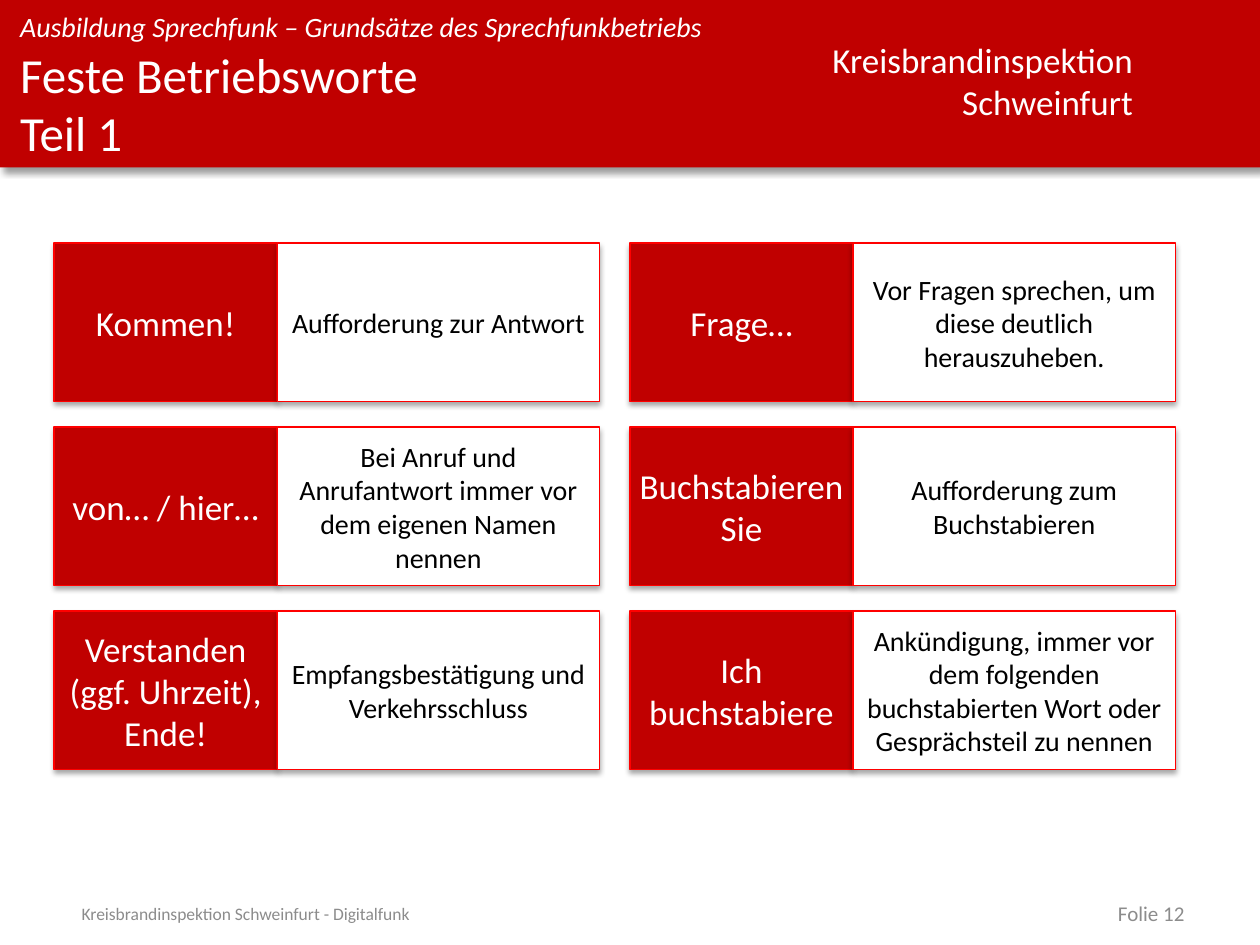
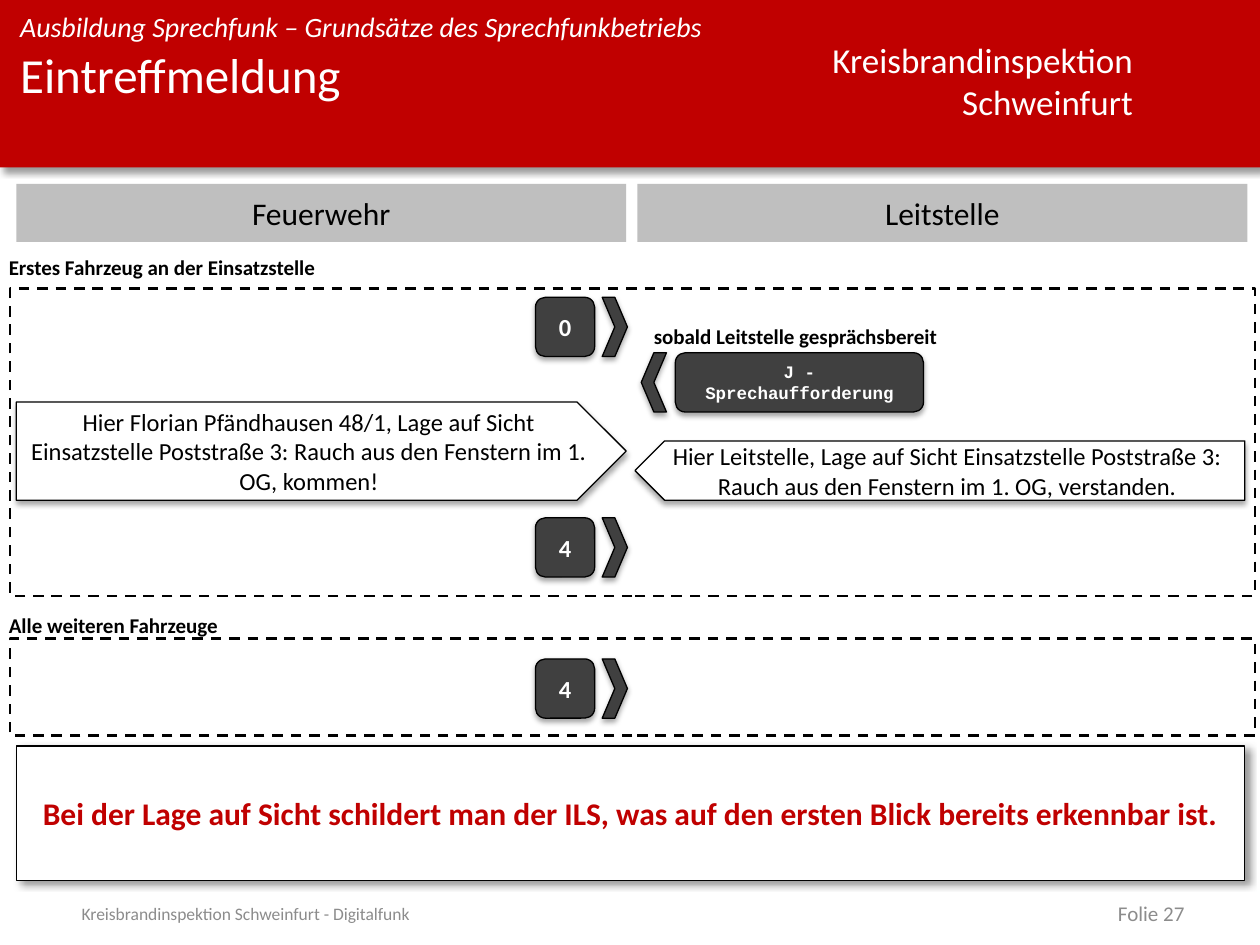
from lxml import etree
from pptx import Presentation
from pptx.dml.color import RGBColor
from pptx.enum.dml import MSO_LINE
from pptx.enum.shapes import MSO_SHAPE
from pptx.enum.text import MSO_ANCHOR, MSO_AUTO_SIZE, PP_ALIGN
from pptx.oxml.ns import qn
from pptx.util import Inches, Pt

RECT, ROUND = MSO_SHAPE.RECTANGLE, MSO_SHAPE.ROUNDED_RECTANGLE
CHEVRON, PLATE = MSO_SHAPE.CHEVRON, MSO_SHAPE.PENTAGON
LEFT, CENTER, RIGHT = PP_ALIGN.LEFT, PP_ALIGN.CENTER, PP_ALIGN.RIGHT
TOP, MIDDLE = MSO_ANCHOR.TOP, MSO_ANCHOR.MIDDLE
DASH, NO_FIT = MSO_LINE.DASH, MSO_AUTO_SIZE.NONE

WIDTH, HEIGHT = 10, 7.5
RED, BRIGHT_RED, WHITE, BLACK = "C00000", "FF0000", "FFFFFF", "000000"
DARK, SILVER, GREY = "404040", "BFBFBF", "8C8C8C"
FONT, MONO = "Calibri", "Courier New"
SOFT = (35, 3.1, 1.8, 90)
DEEP = (40, 4, 3, 45)
INSETS = (0.1, 0.05)

CARD_LEFT, CARD_TOP, CARD_H = 0.43, 1.93, 1.26
CARD_STEP_X, CARD_STEP_Y = 4.57, 1.46
WORD_W, MEANING_W = 1.77, 2.56

FIRE_X, CONTROL_X, LANE_W = 0.13, 5.06, 4.84
KEY, KEY_X, ARROW_X, ARROW_W = 0.47, 4.25, 4.78, 0.2
FRAME_X, FRAME_W = 0.08, 9.88

CARDS = [
    [("Kommen!", "Aufforderung zur Antwort"),
     ("Frage…", "Vor Fragen sprechen, um diese deutlich herauszuheben.")],
    [("von… / hier…",
      "Bei Anruf und Anrufantwort immer vor dem eigenen Namen nennen"),
     ("Buchstabieren Sie", "Aufforderung zum Buchstabieren")],
    [("Verstanden (ggf. Uhrzeit), Ende!",
      "Empfangsbestätigung und Verkehrsschluss"),
     ("Ich buchstabiere",
      "Ankündigung, immer vor dem folgenden buchstabierten Wort oder "
      "Gesprächsteil zu nennen")],
]


def rgb(color):
    """Turn a hex string into a colour."""
    return RGBColor.from_string(color)


def inches(*lengths):
    """Turn plain numbers into lengths."""
    return [Inches(n) for n in lengths]


def write(sp, lines, size, color=BLACK, align=LEFT, anchor=MIDDLE,
          insets=INSETS, wrap=True, bold=False, italic=False, font=FONT):
    """Fill a shape with one formatted paragraph per line."""
    tf = sp.text_frame
    tf.auto_size, tf.word_wrap, tf.vertical_anchor = NO_FIT, wrap, anchor
    tf.margin_left = tf.margin_right = Inches(insets[0])
    tf.margin_top = tf.margin_bottom = Inches(insets[1])
    for i, line in enumerate(lines):
        p = tf.add_paragraph() if i else tf.paragraphs[0]
        p.alignment = align
        for j, part in enumerate(line.split("\n")):
            if j:
                p.add_line_break()
            r = p.add_run()
            r.text = part
            r.font.name, r.font.size = font, Pt(size)
            r.font.bold, r.font.italic = bold, italic
            r.font.color.rgb = rgb(color)


def add_shadow(sp, alpha, blur, dist, angle):
    """Give a shape a black outer shadow."""
    effects = sp.element.spPr.find(qn("a:effectLst"))
    outer = etree.SubElement(
        effects, qn("a:outerShdw"), blurRad=str(Pt(blur)), dist=str(Pt(dist)),
        dir=str(angle * 60000), algn="ctr", rotWithShape="0")
    tint = etree.SubElement(outer, qn("a:srgbClr"), val=BLACK)
    etree.SubElement(tint, qn("a:alpha"), val=str(alpha * 1000))


def add_box(s, kind, box, fill=None, line=None, weight=0.75, shadow=None,
            flip=False):
    """Draw a preset shape."""
    sp = s.shapes.add_shape(kind, *inches(*box))
    sp.shadow.inherit = False
    if fill:
        sp.fill.solid()
        sp.fill.fore_color.rgb = rgb(fill)
    else:
        sp.fill.background()
    if line:
        sp.line.color.rgb = rgb(line)
        sp.line.width = Pt(weight)
    else:
        sp.line.fill.background()
    if shadow:
        add_shadow(sp, *shadow)
    if flip:
        sp.element.spPr.xfrm.set("flipH", "1")
    return sp


def add_label(s, box, lines, size, **style):
    """Add a text box."""
    write(s.shapes.add_textbox(*inches(*box)), lines, size, **style)


def add_slide(prs, title, number):
    """Start a slide with the red band, the title and the footer."""
    s = prs.slides.add_slide(prs.slide_layouts[5])
    head = s.shapes.title
    head.left, head.top, head.width, head.height = inches(0.16, 0.35, 6.32, 0.99)
    write(head, [title], 28, WHITE, anchor=TOP, insets=(0, 0))
    band = add_box(s, RECT, (0, 0, WIDTH, 1.33), RED, shadow=DEEP)
    head.element.addprevious(band.element)
    add_label(s, (6.48, 0.26, 2.61, 0.77), ["Kreisbrandinspektion", "Schweinfurt"],
              20, color=WHITE, align=RIGHT, anchor=TOP, wrap=False)
    add_label(s, (0.16, 0.08, 6.32, 0.27),
              ["Ausbildung Sprechfunk – Grundsätze des Sprechfunkbetriebs"],
              16, color=WHITE, anchor=TOP, insets=(0, 0), italic=True)
    add_label(s, (0.55, 7.15, 6.04, 0.2),
              ["Kreisbrandinspektion Schweinfurt - Digitalfunk"], 10, color=GREY)
    add_label(s, (7.17, 7.15, 2.33, 0.2), [f"Folie {number}"], 12,
              color=GREY, align=RIGHT)
    return s


def add_card(s, row, col, word, meaning):
    """Put a radio word beside its meaning in the card grid."""
    x, y = CARD_LEFT + col * CARD_STEP_X, CARD_TOP + row * CARD_STEP_Y
    sp = add_box(s, RECT, (x, y, WORD_W, CARD_H), RED, BRIGHT_RED, shadow=SOFT)
    write(sp, [word], 20, WHITE, CENTER, insets=(0.04, 0.04))
    sp = add_box(s, RECT, (x + WORD_W, y, MEANING_W, CARD_H), WHITE,
                 BRIGHT_RED, shadow=SOFT)
    write(sp, [meaning], 16, align=CENTER)


def add_key(s, x, y, text, width=KEY, size=14, font=FONT):
    """Draw a dark radio key."""
    sp = add_box(s, ROUND, (x, y, width, KEY), DARK, BLACK, shadow=SOFT)
    write(sp, [text], size, WHITE, CENTER, bold=True, font=font)


def add_arrow(s, x, y, flip=False):
    """Draw the chevron that shows where a key press goes."""
    add_box(s, CHEVRON, (x, y, ARROW_W, KEY), DARK, BLACK, shadow=SOFT, flip=flip)


def add_message(s, box, text, flip=False):
    """Draw a spoken message as a pointed box."""
    sp = add_box(s, PLATE, box, WHITE, BLACK, shadow=SOFT, flip=flip)
    write(sp, [text], 14, align=CENTER)


def add_phase(s, title, title_y, y, height):
    """Draw a dashed frame with its heading above."""
    add_label(s, (0.07, title_y, 2.46, 0.2), [title], 12, anchor=TOP,
              insets=(0, 0), wrap=False, bold=True)
    sp = add_box(s, RECT, (FRAME_X, y, FRAME_W, height), line=BLACK, weight=1.5)
    sp.line.dash_style = DASH


def build_words(prs):
    """Build the slide of fixed radio words."""
    s = add_slide(prs, "Feste Betriebsworte\nTeil 1", 12)
    for row, cards in enumerate(CARDS):
        for col, (word, meaning) in enumerate(cards):
            add_card(s, row, col, word, meaning)


def build_arrival(prs):
    """Build the slide of the arrival report."""
    s = add_slide(prs, "Eintreffmeldung", 27)
    for x, name in ((FIRE_X, "Feuerwehr"), (CONTROL_X, "Leitstelle")):
        sp = add_box(s, RECT, (x, 1.46, LANE_W, 0.46), SILVER)
        write(sp, [name], 18, align=CENTER, insets=(0.08, 0.08), wrap=False)
    add_phase(s, "Erstes Fahrzeug an der Einsatzstelle", 2.02, 2.29, 2.44)
    add_phase(s, "Alle weiteren Fahrzeuge", 4.86, 5.07, 0.77)
    for y, digit in ((2.36, "0"), (4.11, "4"), (5.23, "4")):
        add_key(s, KEY_X, y, digit)
        add_arrow(s, ARROW_X, y)
    add_label(s, (5.09, 2.52, 2.52, 0.3), ["sobald Leitstelle gesprächsbereit"],
              12, anchor=TOP, wrap=False, bold=True)
    add_arrow(s, 5.09, 2.8, flip=True)
    add_key(s, 5.36, 2.8, "J - Sprechaufforderung", 1.97, 10, MONO)
    add_message(s, (FIRE_X, 3.19, LANE_W, 0.78),
                "Hier Florian Pfändhausen 48/1, Lage auf Sicht Einsatzstelle "
                "Poststraße 3: Rauch aus den Fenstern im 1. OG, kommen!")
    add_message(s, (5.04, 3.5, LANE_W, KEY),
                "Hier Leitstelle, Lage auf Sicht Einsatzstelle Poststraße 3: "
                "Rauch aus den Fenstern im 1. OG, verstanden.", flip=True)
    sp = add_box(s, RECT, (FIRE_X, 5.92, 9.75, 1.07), WHITE, BLACK, shadow=DEEP)
    write(sp, ["Bei der Lage auf Sicht schildert man der ILS, was auf den ersten "
               "Blick bereits erkennbar ist."], 18, RED, CENTER, bold=True)


def main():
    """Build and save the slides."""
    prs = Presentation()
    prs.slide_width, prs.slide_height = inches(WIDTH, HEIGHT)
    build_words(prs)
    build_arrival(prs)
    prs.save("out.pptx")


if __name__ == "__main__":
    main()
